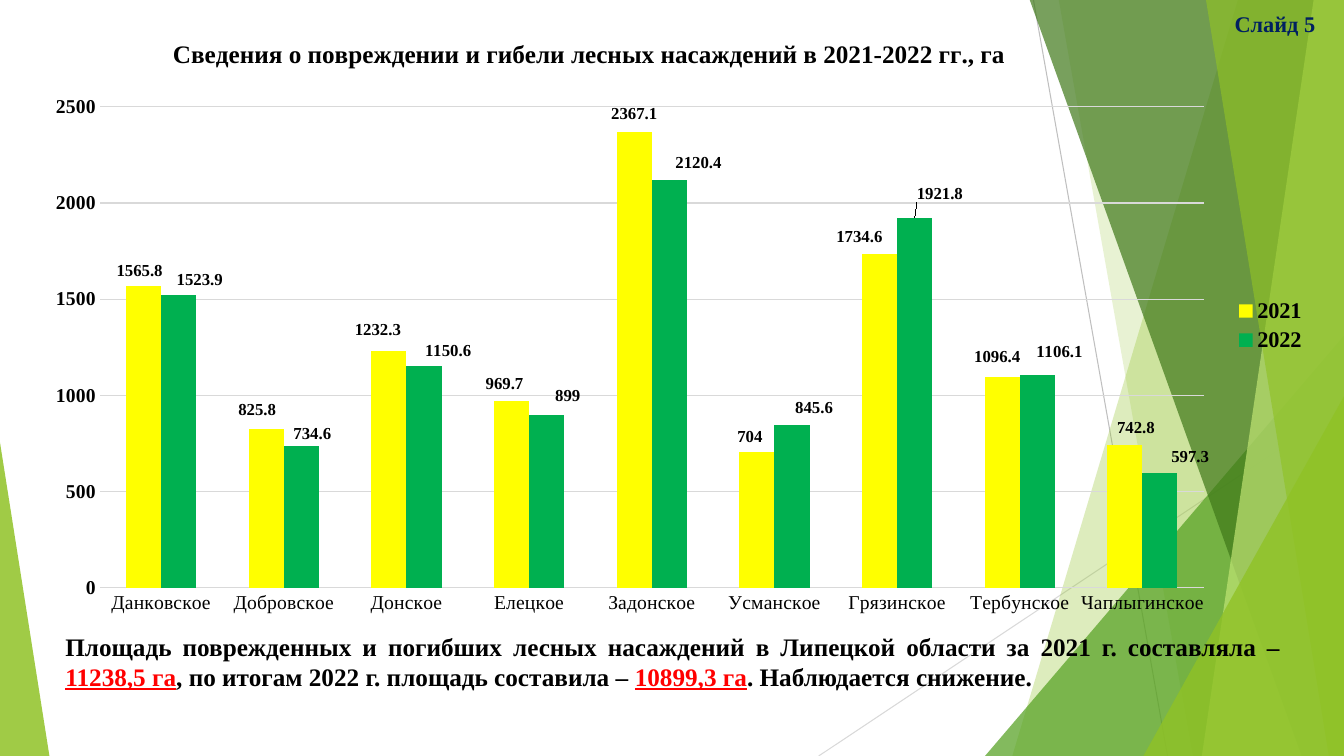
from dataclasses import dataclass

from lxml.etree import SubElement
from pptx import Presentation
from pptx.chart.data import CategoryChartData
from pptx.dml.color import RGBColor
from pptx.enum.chart import XL_CHART_TYPE, XL_LABEL_POSITION, XL_LEGEND_POSITION, XL_TICK_MARK
from pptx.enum.shapes import MSO_CONNECTOR, MSO_SHAPE
from pptx.enum.text import MSO_AUTO_SIZE, PP_ALIGN
from pptx.oxml import parse_xml
from pptx.oxml.ns import nsdecls, qn
from pptx.util import Inches, Pt

PAGE_WIDTH, PAGE_HEIGHT = 13.33, 7.5
CHART_LEFT, CHART_TOP, CHART_WIDTH, CHART_HEIGHT = 0.3, 0.24, 12.75, 5.97


@dataclass(frozen=True)
class Theme:
    font: str = "Times New Roman"
    black: str = "000000"
    navy: str = "002060"
    red: str = "FF0000"
    gray: str = "BFBFBF"
    grid: str = "D9D9D9"
    lime: str = "90C226"
    pale: str = "C0E474"
    green: str = "54A021"
    dark: str = "3F7819"
    yellow: str = "FFFF00"
    emerald: str = "00B050"
    body_size: int = 18
    legend_size: int = 16
    axis_size: int = 14
    label_size: int = 12


THEME = Theme()


@dataclass(frozen=True)
class Pane:
    """Four-sided facet that runs from its slanted left side to the page edge."""
    top_x: float
    bottom_x: float
    color: str
    opacity: int


@dataclass(frozen=True)
class Wedge:
    """Triangle that stands on the bottom of the page."""
    left: float
    top: float
    width: float
    apex: float
    color: str
    opacity: int


@dataclass(frozen=True)
class YearSeries:
    name: str
    color: str
    values: tuple[float, ...]
    shifts: tuple[tuple[float, float], ...]  # label offsets, inches


@dataclass(frozen=True)
class Span:
    text: str
    color: str = THEME.black
    underline: bool = False


FACETS = (
    Pane(12.28, 10.04, THEME.lime, 30),
    Pane(10.5, 11.83, THEME.lime, 20),
    Wedge(9.77, 3.33, 3.56, 1, THEME.green, 72),
    Pane(10.21, 12.91, THEME.dark, 70),
    Pane(13.03, 11.92, THEME.pale, 70),
    Pane(11.96, 13.18, THEME.lime, 65),
    Wedge(11.34, 3.93, 1.99, 1, THEME.lime, 80),
    Wedge(0, 4.39, 0.49, 0, THEME.lime, 85),
)
DISTRICTS = ("Данковское", "Добровское", "Донское", "Елецкое", "Задонское",
             "Усманское", "Грязинское", "Тербунское", "Чаплыгинское")
YEARS = (
    YearSeries("2021", THEME.yellow,
               (1565.8, 825.8, 1232.3, 969.7, 2367.1, 704, 1734.6, 1096.4, 742.8),
               ((-0.04, -0.03), (-0.09, -0.06), (-0.11, -0.08), (-0.07, -0.04), (0, -0.06),
                (-0.07, -0.03), (-0.2, -0.04), (-0.05, -0.07), (0.11, -0.04))),
    YearSeries("2022", THEME.emerald,
               (1523.9, 734.6, 1150.6, 899, 2120.4, 845.6, 1921.8, 1106.1, 597.3),
               ((0.21, -0.02), (0.11, 0), (0.24, -0.03), (0.21, -0.06), (0.29, -0.04),
                (0.22, -0.04), (0.25, -0.11), (0.22, -0.1), (0.3, -0.03))),
)


def style_font(font, size: int, color: str = THEME.black, bold: bool = True) -> None:
    font.name, font.size, font.bold = THEME.font, Pt(size), bold
    font.color.rgb = RGBColor.from_string(color)


def draw_line(page, start: tuple, end: tuple, color: str) -> None:
    line = page.shapes.add_connector(MSO_CONNECTOR.STRAIGHT, *map(Inches, start + end))
    line.line.color.rgb = RGBColor.from_string(color)
    line.line.width = Pt(0.75)
    SubElement(line._element.spPr, qn("a:effectLst"))


def draw_facet(page, facet: Pane | Wedge) -> None:
    if isinstance(facet, Pane):
        corners = ((PAGE_WIDTH, -0.01), (PAGE_WIDTH, PAGE_HEIGHT), (facet.bottom_x, PAGE_HEIGHT))
        outline = page.shapes.build_freeform(Inches(facet.top_x), Inches(-0.01))
        outline.add_line_segments([(Inches(x), Inches(y)) for x, y in corners], close=True)
        shape = outline.convert_to_shape()
    else:
        shape = page.shapes.add_shape(
            MSO_SHAPE.ISOSCELES_TRIANGLE, Inches(facet.left), Inches(facet.top),
            Inches(facet.width), Inches(PAGE_HEIGHT - facet.top))
        shape.adjustments[0] = facet.apex
    shape.shadow.inherit = False
    shape.line.fill.background()
    shape.fill.solid()
    shape.fill.fore_color.rgb = RGBColor.from_string(facet.color)
    color = shape._element.spPr.find(qn("a:solidFill"))[0]
    SubElement(color, qn("a:alpha"), val=str(facet.opacity * 1000))


def place(part, index: int, inner: bool = False, **inches: float) -> None:
    """Give a chart part a manual layout, from inches to fractions of the chart."""
    for previous in part.findall(qn("c:layout")):
        part.remove(previous)
    layout = parse_xml(f"<c:layout {nsdecls('c')}><c:manualLayout/></c:layout>")
    manual = layout[0]
    if inner:
        SubElement(manual, qn("c:layoutTarget"), val="inner")
    if part.tag != qn("c:dLbl"):
        for mode in ("xMode", "yMode"):
            SubElement(manual, qn(f"c:{mode}"), val="edge")
    for key, length in inches.items():
        total = CHART_WIDTH if key in "xw" else CHART_HEIGHT
        SubElement(manual, qn(f"c:{key}"), val=str(length / total))
    part.insert(index, layout)


def style_series(series, year: YearSeries) -> None:
    series.format.fill.solid()
    series.format.fill.fore_color.rgb = RGBColor.from_string(year.color)
    series.invert_if_negative = False
    labels = series.data_labels
    labels.show_value = True
    style_font(labels.font, THEME.label_size)
    for index in range(len(year.values)):
        label = series.points[index].data_label
        style_font(label.font, THEME.label_size)
        label.position = XL_LABEL_POSITION.OUTSIDE_END
    for label, (x, y) in zip(series._element.iter(qn("c:dLbl")), year.shifts):
        place(label, 1, x=x, y=y)


def draw_chart(page) -> None:
    data = CategoryChartData()
    data.categories = DISTRICTS
    for year in YEARS:
        data.add_series(year.name, year.values)
    chart = page.shapes.add_chart(
        XL_CHART_TYPE.COLUMN_CLUSTERED, Inches(CHART_LEFT), Inches(CHART_TOP),
        Inches(CHART_WIDTH), Inches(CHART_HEIGHT), data).chart
    style_font(chart.font, THEME.label_size, bold=False)
    # Title and legend
    chart.has_title = True
    title = chart.chart_title
    title.text_frame.text = "Сведения о повреждении и гибели лесных насаждений в 2021-2022 гг., га"
    style_font(title.text_frame.paragraphs[0].runs[0].font, THEME.body_size)
    place(title._element, 1, x=1.37, y=0.1)
    chart.has_legend = True
    legend = chart.legend
    legend.position = XL_LEGEND_POSITION.RIGHT
    legend.include_in_layout = False
    style_font(legend.font, THEME.legend_size)
    place(legend._element, 1, x=11.9, y=2.68, w=0.8, h=0.62)
    # Axes
    for axis in (chart.category_axis, chart.value_axis):
        axis.major_tick_mark = axis.minor_tick_mark = XL_TICK_MARK.NONE
        style_font(axis.tick_labels.font, THEME.axis_size, bold=axis is not chart.category_axis)
    style_font(chart.category_axis.tick_labels.font, THEME.axis_size, bold=False)
    style_font(chart.value_axis.tick_labels.font, THEME.axis_size)
    chart.value_axis.minimum_scale, chart.value_axis.maximum_scale = 0, 2500
    chart.value_axis.major_unit = 500
    chart.value_axis.format.line.fill.background()
    lines = ((chart.category_axis.format.line, 1), (chart.value_axis.major_gridlines.format.line, 0.75))
    for line, width in lines:
        line.color.rgb = RGBColor.from_string(THEME.grid)
        line.width = Pt(width)
    # Columns
    plot = chart.plots[0]
    plot.gap_width, plot.overlap, plot.vary_by_categories = 150, 0, False
    for series, year in zip(plot.series, YEARS):
        style_series(series, year)
    place(chart._chartSpace.chart.plotArea, 0, inner=True, x=0.69, y=0.82, w=10.95, h=4.77)


def draw_text(page, spans: tuple[Span, ...], *, at: tuple, size: int,
              align: PP_ALIGN, wrap: bool = True) -> None:
    box = page.shapes.add_textbox(*map(Inches, at))
    box.text_frame.word_wrap = wrap
    box.text_frame.auto_size = MSO_AUTO_SIZE.SHAPE_TO_FIT_TEXT
    para = box.text_frame.paragraphs[0]
    para.alignment = align
    for span in spans:
        run = para.add_run()
        run.text = span.text
        style_font(run.font, size, span.color)
        run.font.underline = span.underline


def main() -> None:
    deck = Presentation()
    deck.slide_width, deck.slide_height = Inches(PAGE_WIDTH), Inches(PAGE_HEIGHT)
    page = deck.slides.add_slide(deck.slide_layouts[6])
    # Background facets
    draw_line(page, (10.25, 0), (11.58, PAGE_HEIGHT), THEME.gray)
    draw_line(page, (PAGE_WIDTH, 4.03), (8.12, PAGE_HEIGHT), THEME.grid)
    for facet in FACETS:
        draw_facet(page, facet)
    # Content
    draw_chart(page)
    draw_text(page, (Span("Слайд 5", THEME.navy),), at=(12.14, 0.05, 1.01, 0.37),
              size=THEME.legend_size, align=PP_ALIGN.CENTER, wrap=False)
    summary = (
        Span("Площадь поврежденных и погибших лесных насаждений в Липецкой области за 2021 г. составляла – "),
        Span("11238,5 га", THEME.red, True),
        Span(", по итогам 2022 г. площадь составила – "),
        Span("10899,3 га", THEME.red, True),
        Span(". Наблюдается снижение."),
    )
    draw_text(page, summary, at=(0.55, 6.21, 12.25, 0.71), size=THEME.body_size, align=PP_ALIGN.JUSTIFY)
    deck.save("out.pptx")


if __name__ == "__main__":
    main()
